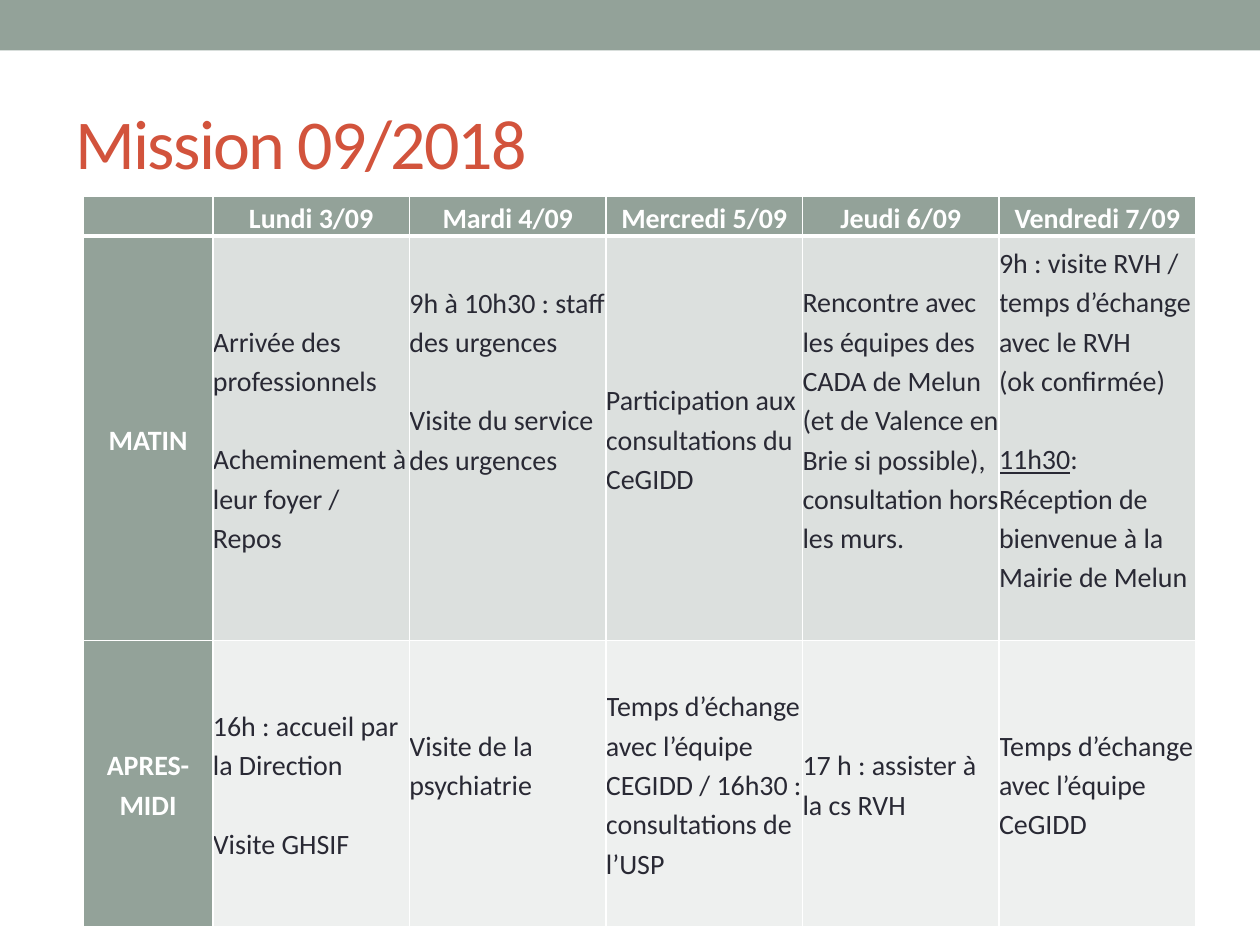
from pptx import Presentation
from pptx.dml.color import RGBColor
from pptx.enum.shapes import MSO_SHAPE
from pptx.enum.text import MSO_ANCHOR, PP_ALIGN
from pptx.oxml import parse_xml
from pptx.oxml.ns import nsdecls
from pptx.util import Inches, Pt

COLORS = {
    "sage": "93A299", "red": "D2533C", "ink": "292934", "white": "FFFFFF",
    "morning": "DCE0DE", "afternoon": "EEF0EF",
}
LINE = 0.31  # height in inches of one text line in the table

# A blank line is a gap of one line; underscores enclose underlined words
ROWS = [
    ["", "Lundi 3/09", "Mardi 4/09", "Mercredi 5/09", "Jeudi 6/09", "Vendredi 7/09"],
    ["MATIN",
     "Arrivée des professionnels\n\nAcheminement à leur foyer / Repos",
     "9h à 10h30 : staff des urgences\n\nVisite du service des urgences\n\n\n",
     "Participation aux consultations du CeGIDD",
     "Rencontre avec les équipes des CADA de Melun (et de Valence en Brie "
     "si possible), consultation hors les murs.\n",
     "9h : visite RVH / temps d’échange avec le RVH\n(ok confirmée)\n\n"
     "_11h30_: Réception de bienvenue à la Mairie de Melun\n"],
    ["APRES-MIDI",
     "16h : accueil par la Direction\n\nVisite GHSIF",
     "Visite de la psychiatrie\n",
     "Temps d’échange avec l’équipe CEGIDD / 16h30 : consultations de l’USP",
     "17 h : assister à la cs RVH",
     "Temps d’échange avec l’équipe CeGIDD"],
]


def rgb(name):
    return RGBColor.from_string(COLORS[name])


def add_run(p, text, size=16, color="ink", bold=False, underline=False):
    r = p.add_run()
    r.text = text
    r.font.name = "Calibri"
    r.font.size = Pt(size)
    r.font.color.rgb = rgb(color)
    r.font.bold = bold
    r.font.underline = underline
    return r


prs = Presentation()
prs.slide_width, prs.slide_height = Inches(10), Inches(7.5)
s = prs.slides.add_slide(prs.slide_layouts[5])

# Top band
band = s.shapes.add_shape(MSO_SHAPE.RECTANGLE, 0, 0, Inches(10), Inches(0.4))
band.shadow.inherit = False
band.fill.solid()
band.fill.fore_color.rgb = rgb("sage")
band.line.fill.background()

# Title
title = s.shapes.title
title.left, title.top = Inches(0.5), Inches(0.58)
title.width, title.height = Inches(9), Inches(1.08)
tf = title.text_frame
tf.vertical_anchor = MSO_ANCHOR.MIDDLE
p = tf.paragraphs[0]
p.alignment = PP_ALIGN.LEFT
r = add_run(p, "Mission 09/2018", size=40, color="red")
r.font._element.set("spc", "-100")

# Schedule table
table = s.shapes.add_table(3, 6, Inches(0.66), Inches(1.56),
                           Inches(8.83), Inches(5.76)).table
for i, column in enumerate(table.columns):
    column.width = Inches(1.56 if i else 1.03)
for row, height in zip(table.rows, (0.28, 3.21, 2.27)):
    row.height = Inches(height)

for i, texts in enumerate(ROWS):
    for j, text in enumerate(texts):
        cell = table.cell(i, j)
        heading = i == 0 or j == 0

        # White borders, thicker under the header row
        widths = {"L": 1, "R": 1, "T": 3 if i == 1 else 1, "B": 3 if i == 0 else 1}
        tc_pr = cell._tc.get_or_add_tcPr()
        for side, width in widths.items():
            tc_pr.append(parse_xml(
                f'<a:ln{side} {nsdecls("a")} w="{Pt(width)}"><a:solidFill>'
                f'<a:srgbClr val="{COLORS["white"]}"/></a:solidFill></a:ln{side}>'))
        cell.fill.solid()
        cell.fill.fore_color.rgb = rgb(
            "sage" if heading else ("morning", "afternoon")[i - 1])

        # Trailing blank lines become bottom margin
        body = text.rstrip("\n")
        cell.margin_left = cell.margin_right = cell.margin_top = 0
        cell.margin_bottom = Inches(LINE * (len(text) - len(body)))
        cell.vertical_anchor = MSO_ANCHOR.MIDDLE
        if not text:
            cell.text_frame.paragraphs[0].font.size = Pt(16)
            continue

        # Text, with a one-line gap between blocks
        tf = cell.text_frame
        p = tf.paragraphs[0]
        for b, block in enumerate(body.split("\n\n")):
            for n, line in enumerate(block.split("\n")):
                if b or n:
                    p = tf.add_paragraph()
                p.alignment = PP_ALIGN.CENTER if heading else PP_ALIGN.LEFT
                p.line_spacing = 1.15
                if b and n == 0:
                    p.space_before = Inches(LINE)
                for k, part in enumerate(line.split("_")):
                    if part:
                        add_run(p, part, color="white" if heading else "ink",
                                bold=heading, underline=k % 2 == 1)

prs.save("out.pptx")
